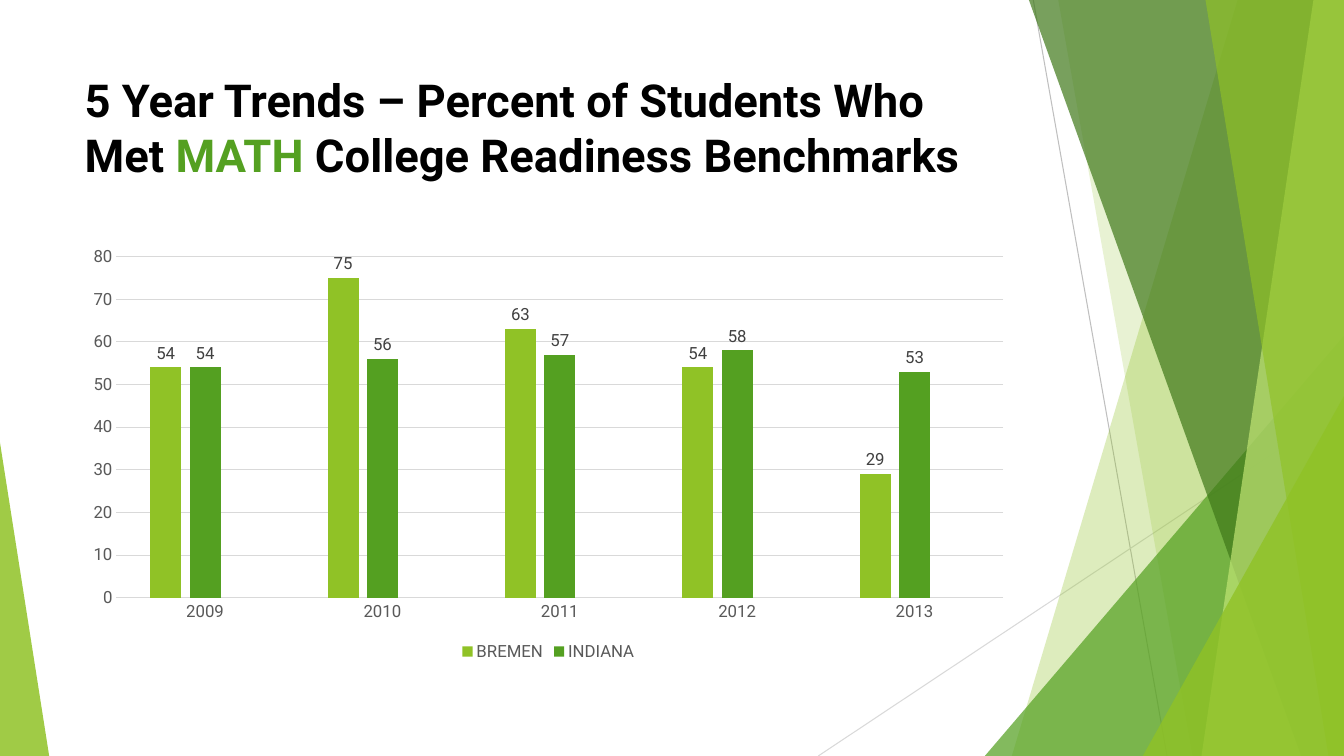
from lxml import etree
from pptx import Presentation
from pptx.chart.data import CategoryChartData
from pptx.dml.color import RGBColor
from pptx.enum.chart import XL_CHART_TYPE, XL_LABEL_POSITION, XL_LEGEND_POSITION, XL_TICK_MARK
from pptx.enum.shapes import MSO_CONNECTOR, MSO_SHAPE
from pptx.enum.text import MSO_ANCHOR, MSO_AUTO_SIZE, PP_ALIGN
from pptx.oxml.ns import qn
from pptx.util import Cm, Pt

COLUMN = XL_CHART_TYPE.COLUMN_CLUSTERED
OUTSIDE = XL_LABEL_POSITION.OUTSIDE_END
BOTTOM = XL_LEGEND_POSITION.BOTTOM
NO_TICK = XL_TICK_MARK.NONE
STRAIGHT = MSO_CONNECTOR.STRAIGHT
TRIANGLE = MSO_SHAPE.ISOSCELES_TRIANGLE

FONT = "Roboto"
WIDE, HIGH = 33.87, 19.05
COLORS = {
    "black": "000000", "label": "404040", "text": "595959",
    "grid": "D9D9D9", "gray": "BFBFBF",
    "lime": "90C226", "green": "54A021", "dark": "3F7819",
    "pale": "C0E474", "gold": "E6B91E",
}


def rgb(name):
    return RGBColor.from_string(COLORS[name])


def tint(shape, name, alpha):
    """Fill a shape with a colour at alpha percent opacity, without outline."""
    shape.shadow.inherit = False
    shape.line.fill.background()
    shape.fill.solid()
    shape.fill.fore_color.rgb = rgb(name)
    color = shape.fill._xPr.find(".//" + qn("a:srgbClr"))
    etree.SubElement(color, qn("a:alpha"), val=str(alpha * 1000))


deck = Presentation()
deck.slide_width, deck.slide_height = Cm(WIDE), Cm(HIGH)
slide = deck.slides.add_slide(deck.slide_layouts[5])
shapes = slide.shapes

# Thin lines behind the facets
for x1, y1, x2, y2, name in [
    (26.04, 0, 29.41, HIGH, "gray"),
    (WIDE, 10.24, 20.62, HIGH, "grid"),
]:
    line = shapes.add_connector(STRAIGHT, Cm(x1), Cm(y1), Cm(x2), Cm(y2))
    line.line.color.rgb = rgb(name)
    line.line.width = Pt(0.75)
    etree.SubElement(line._element.spPr, qn("a:effectLst"))

# Facets: a wedge runs to the right edge from its top x to its bottom x;
# a triangle has left, top, width and the side its tip is on
for kind, spot, name, alpha in [
    ("wedge", (31.19, 25.5), "lime", 30),
    ("wedge", (26.67, 30.05), "lime", 20),
    ("triangle", (24.82, 8.46, 9.05, 1), "green", 72),
    ("wedge", (25.93, 32.79), "dark", 70),
    ("wedge", (33.1, 30.28), "pale", 70),
    ("wedge", (30.38, 33.48), "lime", 65),
    ("triangle", (28.8, 9.98, 5.07, 1), "lime", 80),
    ("triangle", (0, 11.15, 1.24, 0), "lime", 85),
]:
    if kind == "wedge":
        top, base = spot
        pen = shapes.build_freeform(Cm(top), 0)
        pen.add_line_segments(
            [(Cm(WIDE), 0), (Cm(WIDE), Cm(HIGH)), (Cm(base), Cm(HIGH))])
        facet = pen.convert_to_shape()
    else:
        x, y, width, tip = spot
        facet = shapes.add_shape(TRIANGLE, Cm(x), Cm(y), Cm(width), Cm(HIGH - y))
        facet.adjustments[0] = tip
    tint(facet, name, alpha)

# Title
title = shapes.title
title.left, title.top, title.width, title.height = Cm(1.88), Cm(1.7), Cm(23.88), Cm(3.66)
frame = title.text_frame
frame.word_wrap = True
frame.auto_size = MSO_AUTO_SIZE.NONE
frame.vertical_anchor = MSO_ANCHOR.TOP
para = frame.paragraphs[0]
para.alignment = PP_ALIGN.LEFT
for text, name in [
    ("5 Year Trends – Percent of Students Who Met ", "black"),
    ("MATH ", "green"),
    ("College Readiness Benchmarks", "black"),
]:
    run = para.add_run()
    run.text = text
    run.font.name, run.font.size, run.font.bold = FONT, Pt(32.4), True
    run.font.color.rgb = rgb(name)

# Chart: the empty third series keeps its space in each group
data = CategoryChartData()
data.categories = ["2009", "2010", "2011", "2012", "2013"]
data.add_series("BREMEN", [54, 75, 63, 54, 29])
data.add_series("INDIANA", [54, 56, 57, 58, 53])
data.add_series("Series 3", [None] * 5)
chart = shapes.add_chart(COLUMN, Cm(1.88), Cm(6), Cm(23.88), Cm(10.77), data).chart
chart.has_title = False
chart.font.name, chart.font.size = FONT, Pt(12)
chart.font.color.rgb = rgb("text")

plot = chart.plots[0]
plot.gap_width, plot.overlap = 219, -27
plot.vary_by_categories = False
for series, name in zip(plot.series, ["lime", "green", "gold"]):
    series.format.fill.solid()
    series.format.fill.fore_color.rgb = rgb(name)
    labels = series.data_labels
    labels.show_value = True
    labels.position = OUTSIDE
    labels.font.name, labels.font.size = FONT, Pt(12)
    labels.font.color.rgb = rgb("label")

years, values = chart.category_axis, chart.value_axis
for axis in (years, values):
    axis.major_tick_mark = axis.minor_tick_mark = NO_TICK
values.minimum_scale, values.maximum_scale, values.major_unit = 0, 80, 10
values.has_major_gridlines = True
values.format.line.fill.background()
for rule in (years.format.line, values.major_gridlines.format.line):
    rule.color.rgb = rgb("grid")
    rule.width = Pt(0.75)

chart.has_legend = True
legend = chart.legend
legend.position = BOTTOM
legend.include_in_layout = False
entry = etree.Element(qn("c:legendEntry"))
etree.SubElement(entry, qn("c:idx"), val="2")
etree.SubElement(entry, qn("c:delete"), val="1")
legend._element.find(qn("c:legendPos")).addnext(entry)

deck.save("out.pptx")
